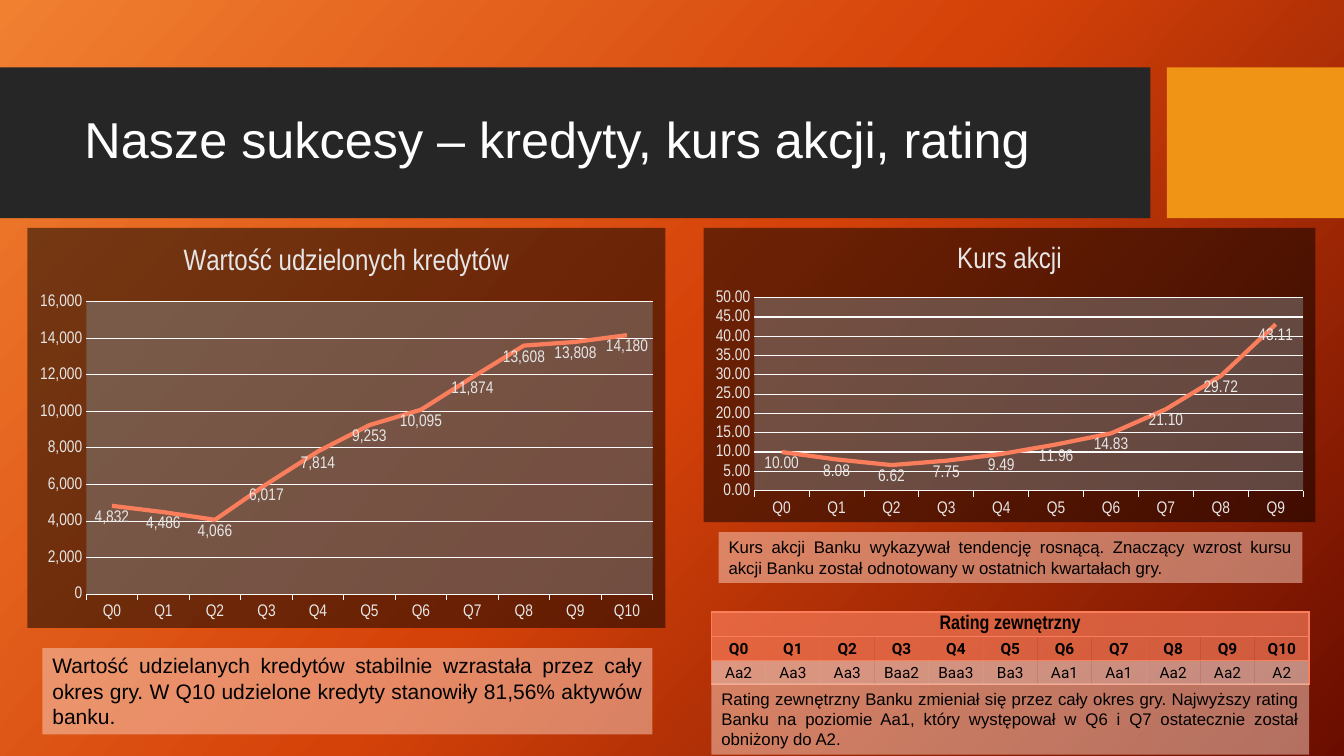
from pptx import Presentation
from pptx.chart.data import CategoryChartData
from pptx.dml.color import RGBColor
from pptx.dml.fill import FillFormat
from pptx.enum.chart import XL_CHART_TYPE, XL_LABEL_POSITION, XL_MARKER_STYLE, XL_TICK_MARK
from pptx.enum.shapes import MSO_SHAPE
from pptx.enum.text import MSO_ANCHOR, MSO_AUTO_SIZE, PP_ALIGN
from pptx.oxml import parse_xml
from pptx.oxml.ns import nsdecls, qn
from pptx.oxml.xmlchemy import OxmlElement
from pptx.util import Cm, Pt

BLACK = RGBColor(0x00, 0x00, 0x00)
WHITE = RGBColor(0xFF, 0xFF, 0xFF)
CHARCOAL = RGBColor(0x26, 0x26, 0x26)
AMBER = RGBColor(0xF0, 0x94, 0x15)
CORAL = RGBColor(0xFA, 0x7E, 0x5C)
BLUSH = RGBColor(0xFE, 0xE5, 0xDE)
PEACH = RGBColor(0xF9, 0xD1, 0xC1)
GRAY = RGBColor(0x80, 0x80, 0x80)
SILVER = RGBColor(0xE7, 0xE6, 0xE6)
GRID = RGBColor(0xFB, 0xFB, 0xFB)
BACKDROP = [(0, RGBColor(0xF1, 0x80, 0x31)), (50, RGBColor(0xD5, 0x42, 0x09)),
            (100, RGBColor(0x6A, 0x0D, 0x00))]


def paint(properties, color, opacity=100):
    """Fill the owner of a properties element with a colour of given opacity in percent."""
    fill = FillFormat.from_fill_parent(properties)
    fill.solid()
    fill.fore_color.rgb = color
    if opacity < 100:
        alpha = OxmlElement("a:alpha")
        alpha.set("val", str(opacity * 1000))
        properties.find(".//" + qn("a:srgbClr")).append(alpha)


def add_block(page, left, top, width, height, color, opacity=100):
    block = page.shapes.add_shape(MSO_SHAPE.RECTANGLE, Cm(left), Cm(top), Cm(width), Cm(height))
    block.shadow.inherit = False
    block.line.fill.background()
    paint(block._element.spPr, color, opacity)
    return block


deck = Presentation()
deck.slide_width, deck.slide_height = Cm(33.87), Cm(19.05)
page = deck.slides.add_slide(deck.slide_layouts[6])

# Background gradient
background = page.background.fill
background.gradient()
background.gradient_angle = 318
stops = page._element.find(".//" + qn("a:gsLst"))
for stop in list(stops):
    stops.remove(stop)
for position, color in BACKDROP:
    stops.append(parse_xml(f'<a:gs {nsdecls("a")} pos="{position * 1000}">'
                           f'<a:srgbClr val="{color}"/></a:gs>'))

# Title band
add_block(page, 0, 1.7, 28.99, 3.8, CHARCOAL)
add_block(page, 29.41, 1.7, 4.46, 3.8, AMBER)
title = page.shapes.add_textbox(Cm(1.88), Cm(2.08), Cm(26.7), Cm(3))
title.text_frame.word_wrap = True
title.text_frame.vertical_anchor = MSO_ANCHOR.MIDDLE
para = title.text_frame.paragraphs[0]
para.text = "Nasze sukcesy – kredyty, kurs akcji, rating"
para.line_spacing = 0.9
para.font.size, para.font.name, para.font.color.rgb = Pt(36), "Arial", WHITE

# Rating table
ratings = ["Aa2", "Aa3", "Aa3", "Baa2", "Baa3", "Ba3", "Aa1", "Aa1", "Aa2", "Aa2", "A2"]
quarters = [f"Q{number}" for number in range(len(ratings))]
heading = ["Rating zewnętrzny"] + [""] * (len(ratings) - 1)
table_frame = page.shapes.add_table(3, len(ratings), Cm(17.93), Cm(15.42), Cm(15.06), Cm(1.8))
table = table_frame.table
table.first_row = table.horz_banding = False
# The "No Style, No Grid" table style
table._tbl.tblPr.find(qn("a:tableStyleId")).text = "{2D5ABB26-0587-4C30-8999-92F81FD0307C}"
table.cell(0, 0).merge(table.cell(0, len(ratings) - 1))
rating_rows = [(heading, 14, "Arial Narrow", True, CORAL, 67),
               (quarters, 11, "Roboto", True, CORAL, 67),
               (ratings, 11, "Roboto", False, BLUSH, 57)]
for row, (texts, size, font, bold, color, opacity) in enumerate(rating_rows):
    table.rows[row].height = Cm(0.6)
    for column, text in enumerate(texts):
        cell = table.cell(row, column)
        cell.margin_left = cell.margin_right = cell.margin_top = Cm(0.03)
        cell.margin_bottom = 0
        cell.vertical_anchor = MSO_ANCHOR.MIDDLE
        para = cell.text_frame.paragraphs[0]
        para.text = text
        para.alignment = PP_ALIGN.CENTER
        para.font.size, para.font.name, para.font.bold = Pt(size), font, bold
        para.font.color.rgb = BLACK
        properties = cell._tc.get_or_add_tcPr()
        paint(properties, color, opacity)
        sides = ["T", "B"]
        if row == 0 or column == len(texts) - 1:
            sides.insert(0, "R")
        if column == 0:
            sides.insert(0, "L")
        for index, side in enumerate(sides):
            properties.insert(index, parse_xml(
                f'<a:ln{side} {nsdecls("a")} w="12700"><a:solidFill>'
                f'<a:srgbClr val="{CORAL}"/></a:solidFill></a:ln{side}>'))

# Comments
comments = [
    (1.07, 16.33, 15.37, 2.18, 15,
     "Wartość udzielanych kredytów stabilnie wzrastała przez cały okres gry. "
     "W Q10 udzielone kredyty stanowiły 81,56% aktywów banku."),
    (18.11, 13.41, 14.71, 1.28, 12,
     "Kurs akcji Banku wykazywał tendencję rosnącą. Znaczący wzrost kursu akcji Banku "
     "został odnotowany w ostatnich kwartałach gry."),
    (17.93, 17.22, 15.06, 1.8, 12,
     "Rating zewnętrzny Banku zmieniał się przez cały okres gry. Najwyższy rating Banku "
     "na poziomie Aa1, który występował w Q6 i Q7 ostatecznie został obniżony do A2."),
]
for left, top, width, height, size, text in comments:
    box = add_block(page, left, top, width, height, PEACH, 50)
    frame = box.text_frame
    frame.word_wrap = True
    frame.auto_size = MSO_AUTO_SIZE.SHAPE_TO_FIT_TEXT
    frame.vertical_anchor = MSO_ANCHOR.TOP
    para = frame.paragraphs[0]
    para.text = text
    para.alignment = PP_ALIGN.JUSTIFY
    para.font.size, para.font.name, para.font.color.rgb = Pt(size), "Arial", BLACK

# Line charts
loans = [4832, 4486, 4066, 6017, 7814, 9253, 10095, 11874, 13608, 13808, 14180]
share_prices = [10, 8.08, 6.62, 7.75, 9.49, 11.96, 14.83, 21.1, 29.72, 43.11]
charts = [
    ("Wartość udzielonych kredytów", loans, "#,##0", 16000, 2000, 0.69, 16.08, 10.08),
    ("Kurs akcji", share_prices, "0.00", 50, 5, 17.73, 15.42, 7.42),
]
for name, values, number_format, top_value, step, left, width, height in charts:
    data = CategoryChartData(number_format=number_format)
    data.categories = quarters[:len(values)]
    data.add_series(name, values)
    chart = page.shapes.add_chart(XL_CHART_TYPE.LINE, Cm(left), Cm(5.74), Cm(width), Cm(height),
                                  data).chart
    chart.has_legend = False
    chart.font.size, chart.font.name, chart.font.color.rgb = Pt(10), "Arial Narrow", WHITE

    chart.has_title = True
    chart.chart_title.include_in_layout = False
    para = chart.chart_title.text_frame.paragraphs[0]
    para.text = name
    para.font.size, para.font.name, para.font.bold = Pt(21), "Arial Narrow", False
    para.font.color.rgb = SILVER

    value_axis, category_axis = chart.value_axis, chart.category_axis
    value_axis.minimum_scale, value_axis.maximum_scale = 0, top_value
    value_axis.major_unit = step
    value_axis.major_tick_mark = XL_TICK_MARK.NONE
    value_axis.format.line.fill.background()
    value_axis.tick_labels.number_format = number_format
    value_axis.tick_labels.number_format_is_linked = False
    category_axis.major_tick_mark = XL_TICK_MARK.OUTSIDE
    for line in (value_axis.major_gridlines.format.line, category_axis.format.line):
        line.width = Pt(0.75)
        line.color.rgb = GRID

    plot = chart.plots[0]
    plot.vary_by_categories = False
    series = plot.series[0]
    series.smooth = False
    series.marker.style = XL_MARKER_STYLE.NONE
    series.format.line.width = Pt(3)
    series.format.line.color.rgb = CORAL
    labels = series.data_labels
    labels.show_value = True
    labels.position = XL_LABEL_POSITION.BELOW
    labels.number_format = number_format
    labels.number_format_is_linked = False
    for font in (value_axis.tick_labels.font, category_axis.tick_labels.font, labels.font):
        font.size, font.name, font.color.rgb = Pt(12), "Arial Narrow", SILVER

    chart_area, plot_area = OxmlElement("c:spPr"), OxmlElement("c:spPr")
    chart._chartSpace.find(qn("c:chart")).addnext(chart_area)
    chart._chartSpace.find(".//" + qn("c:plotArea")).append(plot_area)
    paint(chart_area, BLACK, 50)
    paint(plot_area, GRAY, 50)
    chart_area.append(parse_xml(f'<a:ln {nsdecls("a")}><a:noFill/></a:ln>'))

deck.save("out.pptx")
